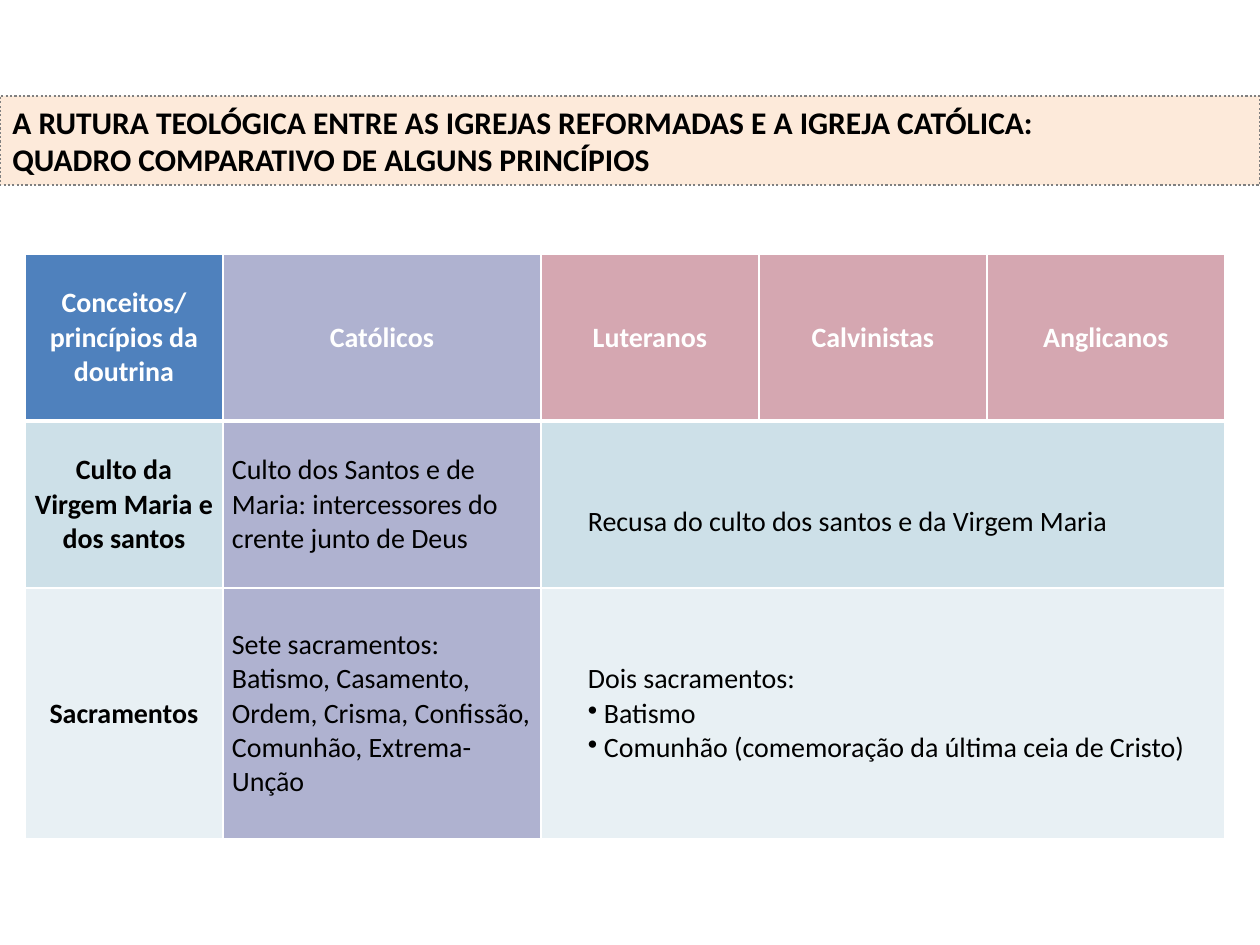
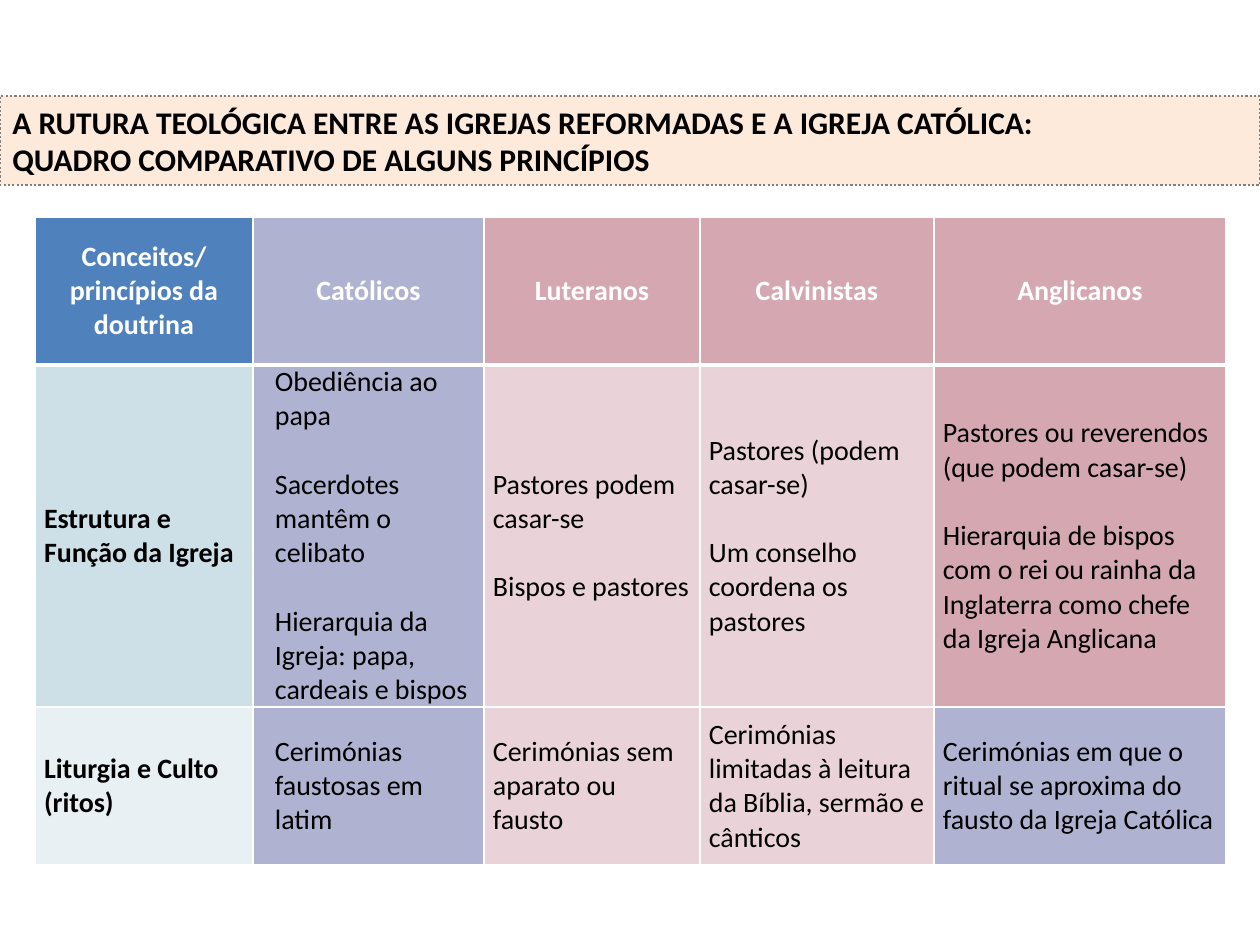
import dataclasses
import lxml.etree
import pptx
import pptx.dml.color
import pptx.enum.dml
import pptx.enum.shapes
import pptx.enum.text
import pptx.oxml.ns
import pptx.util

PX_PER_INCH = 126
FONT = "Calibri"
WHITE, BLACK, GREY = "FFFFFF", "000000", "808080"
PEACH, BLUE, LILAC = "FDEADA", "4F81BD", "AFB2D0"
ROSE, PALE_ROSE = "D5A7B1", "EAD3D8"
ICE, PALE_ICE = "CDE0E8", "E8F0F4"
LEFT = pptx.enum.text.PP_ALIGN.LEFT
CENTER = pptx.enum.text.PP_ALIGN.CENTER
MIDDLE = pptx.enum.text.MSO_ANCHOR.MIDDLE
BLANK_LINE = 19.5
BULLET_HANG = 16
CELL_MARGIN = 9
TITLE = (
    "A RUTURA TEOLÓGICA ENTRE AS IGREJAS REFORMADAS E A IGREJA CATÓLICA:\v"
    "QUADRO COMPARATIVO DE ALGUNS PRINCÍPIOS"
)


@dataclasses.dataclass(frozen=True)
class Entry:
    lines: tuple[str, ...]
    fill: str
    color: str = BLACK
    bold: bool = False
    align: int = LEFT
    indent: int = 0
    gap: float = 0
    first_bullet: int | None = None
    columns: int = 1
    margin_top: int = 0


@dataclasses.dataclass(frozen=True)
class Comparison:
    left: int
    top: int
    widths: tuple[int, ...]
    heights: tuple[int, ...]
    rows: tuple[tuple[Entry, ...], ...]


def px(length: int) -> int:
    return round(length * pptx.util.Inches(1) / PX_PER_INCH)


def rgb(value: str) -> pptx.dml.color.RGBColor:
    return pptx.dml.color.RGBColor.from_string(value)


def add_child(parent, tag: str, **attributes: str):
    return lxml.etree.SubElement(parent, pptx.oxml.ns.qn(tag), attributes)


def write(para, text: str, *, size: int = 16, color: str = BLACK, bold: bool = False,
          align: int = LEFT, indent: int = 0, bullet: bool = False, before: float = 0) -> None:
    properties = para._p.get_or_add_pPr()
    hang = BULLET_HANG if bullet else 0
    properties.set("marL", str(px(indent + hang)))
    properties.set("indent", str(px(-hang)))
    if bullet:
        add_child(properties, "a:buChar", char="•")
    para.alignment = align
    if before:
        para.space_before = pptx.util.Pt(before)
    para.text = text
    for span in para.runs:
        span.font.name = FONT
        span.font.size = pptx.util.Pt(size)
        span.font.bold = bold
        span.font.color.rgb = rgb(color)


def draw_title(page) -> None:
    box = page.shapes.add_shape(
        pptx.enum.shapes.MSO_SHAPE.RECTANGLE, px(0), px(96), px(1260), px(89))
    box.shadow.inherit = False
    box.fill.solid()
    box.fill.fore_color.rgb = rgb(PEACH)
    box.line.color.rgb = rgb(GREY)
    box.line.width = pptx.util.Pt(1.25)
    box.line.dash_style = pptx.enum.dml.MSO_LINE.ROUND_DOT
    box.text_frame.word_wrap = True
    box.text_frame.vertical_anchor = MIDDLE
    write(box.text_frame.paragraphs[0], TITLE, size=18, bold=True)


def draw_borders(cell, row: int) -> None:
    properties = cell._tc.get_or_add_tcPr()
    top = 3 if row == 1 else 1
    bottom = 3 if row == 0 else 1
    for side, width in (("L", 1), ("R", 1), ("T", top), ("B", bottom)):
        border = add_child(properties, f"a:ln{side}", w=str(pptx.util.Pt(width)))
        add_child(add_child(border, "a:solidFill"), "a:srgbClr", val=WHITE)


def fill_cell(cell, entry: Entry) -> None:
    cell.fill.solid()
    cell.fill.fore_color.rgb = rgb(entry.fill)
    cell.vertical_anchor = MIDDLE
    cell.margin_left = cell.margin_right = px(CELL_MARGIN)
    cell.margin_top = px(entry.margin_top)
    cell.margin_bottom = 0
    frame = cell.text_frame
    for index, line in enumerate(entry.lines):
        para = frame.add_paragraph() if index else frame.paragraphs[0]
        bullet = entry.first_bullet is not None and index >= entry.first_bullet
        write(para, line, color=entry.color, bold=entry.bold, align=entry.align,
              indent=entry.indent, bullet=bullet, before=entry.gap if index else 0)


def draw_comparison(page, comparison: Comparison) -> None:
    widths, heights = comparison.widths, comparison.heights
    table = page.shapes.add_table(
        len(heights), len(widths), px(comparison.left), px(comparison.top),
        px(sum(widths)), px(sum(heights))).table
    table.first_row = table.horz_banding = False
    for column, width in zip(table.columns, widths):
        column.width = px(width)
    for row, (height, entries) in enumerate(zip(heights, comparison.rows)):
        table.rows[row].height = px(height)
        for cell in table.rows[row].cells:
            draw_borders(cell, row)
        column = 0
        for entry in entries:
            cell = table.cell(row, column)
            if entry.columns > 1:
                cell.merge(table.cell(row, column + entry.columns - 1))
            fill_cell(cell, entry)
            column += entry.columns


def heading(fill: str, *lines: str) -> Entry:
    return Entry(lines, fill, color=WHITE, bold=True, align=CENTER)


def concept(fill: str, *lines: str, align: int = LEFT) -> Entry:
    return Entry(lines, fill, bold=True, align=align)


HEADINGS = (
    heading(BLUE, "Conceitos/ princípios da", "doutrina"),
    heading(LILAC, "Católicos"),
    *(heading(ROSE, church) for church in ("Luteranos", "Calvinistas", "Anglicanos")),
)

COMPARISONS = (
    Comparison(25, 254, (198, 318, 218, 228, 238), (167, 167, 251), (
        HEADINGS,
        (
            concept(ICE, "Culto da Virgem Maria e dos santos", align=CENTER),
            Entry(("Culto dos Santos e de Maria: intercessores do crente junto de Deus",), LILAC),
            Entry(("Recusa do culto dos santos e da Virgem Maria",), ICE,
                  indent=38, columns=3, margin_top=34),
        ),
        (
            concept(PALE_ICE, "Sacramentos", align=CENTER),
            Entry(("Sete sacramentos:",
                   "Batismo, Casamento, Ordem, Crisma, Confissão, Comunhão, Extrema-Unção"), LILAC),
            Entry(("Dois sacramentos:", "Batismo",
                   "Comunhão (comemoração da última ceia de Cristo)"), PALE_ICE,
                  indent=38, first_bullet=1, columns=3),
        ),
    )),
    Comparison(35, 217, (218, 231, 216, 234, 292), (148, 342, 158), (
        HEADINGS,
        (
            concept(ICE, "Estrutura e Função da Igreja"),
            Entry(("Obediência ao papa", "Sacerdotes mantêm o celibato",
                   "Hierarquia da Igreja: papa, cardeais e bispos"), LILAC,
                  indent=13, gap=BLANK_LINE),
            Entry(("Pastores podem casar-se", "Bispos e pastores"), PALE_ROSE, gap=BLANK_LINE),
            Entry(("Pastores (podem casar-se)", "Um conselho coordena os pastores"), PALE_ROSE,
                  gap=BLANK_LINE),
            Entry(("Pastores ou reverendos (que podem casar-se)",
                   "Hierarquia de bispos com o rei ou rainha da Inglaterra como chefe "
                   "da Igreja Anglicana"), ROSE, gap=BLANK_LINE),
        ),
        (
            concept(PALE_ICE, "Liturgia e Culto", "(ritos)"),
            Entry(("Cerimónias faustosas em latim",), LILAC, indent=13),
            Entry(("Cerimónias sem aparato ou fausto",), PALE_ROSE),
            Entry(("Cerimónias limitadas à leitura da Bíblia, sermão e cânticos",), PALE_ROSE),
            Entry(("Cerimónias em que o ritual se aproxima do fausto da Igreja Católica",), LILAC),
        ),
    )),
)


def main() -> None:
    deck = pptx.Presentation()
    deck.slide_width, deck.slide_height = px(1260), px(945)
    for comparison in COMPARISONS:
        page = deck.slides.add_slide(deck.slide_layouts[6])
        draw_title(page)
        draw_comparison(page, comparison)
    deck.save("out.pptx")


if __name__ == "__main__":
    main()
